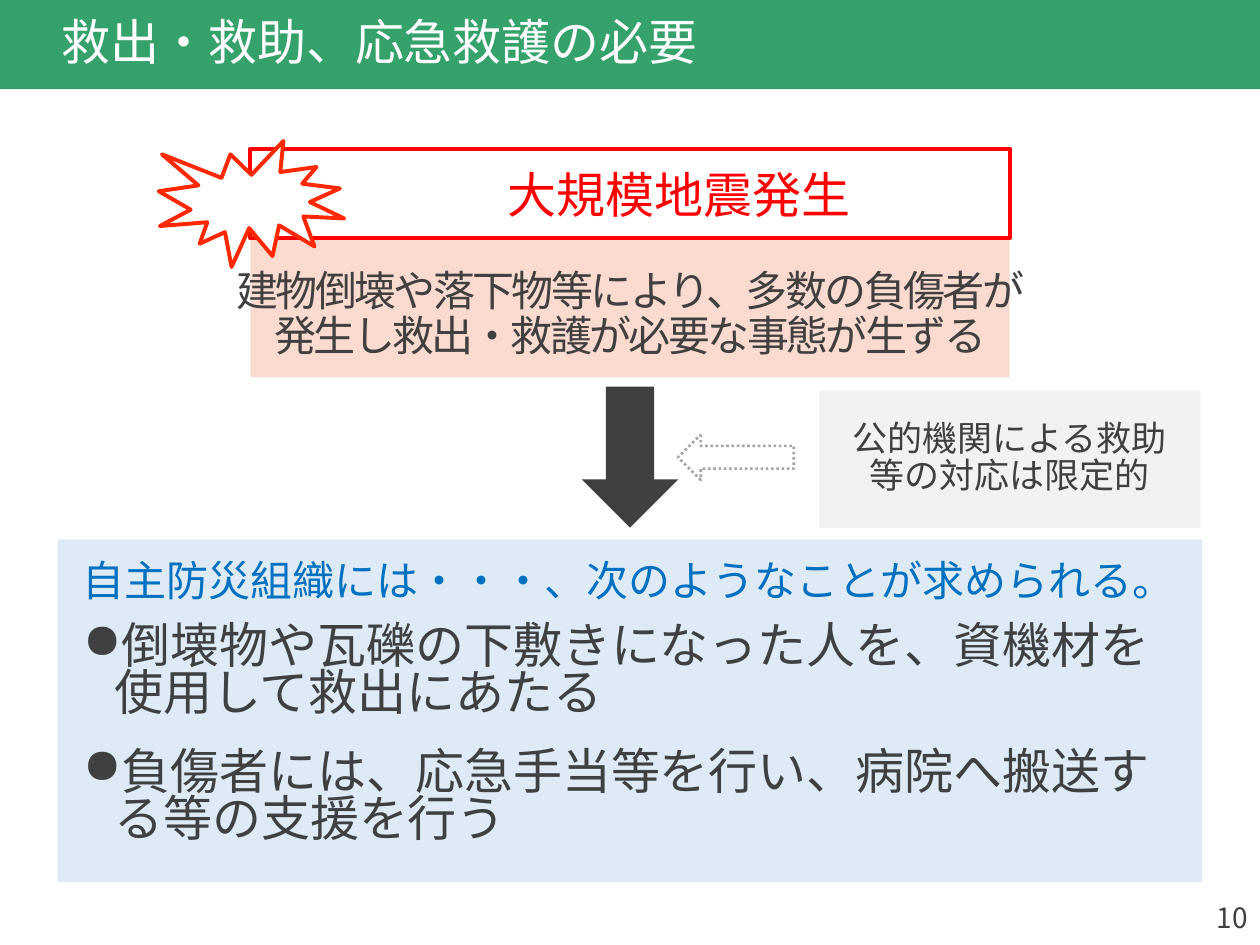
"""Build the slide on rescue and first aid after a major earthquake."""
from lxml.etree import SubElement
from pptx import Presentation
from pptx.dml.color import RGBColor
from pptx.enum.dml import MSO_LINE
from pptx.enum.shapes import MSO_SHAPE
from pptx.enum.text import MSO_ANCHOR, MSO_AUTO_SIZE, PP_ALIGN
from pptx.oxml.ns import qn
from pptx.util import Pt

GREEN = RGBColor(0x35, 0xA1, 0x6B)
WHITE = RGBColor(0xFF, 0xFF, 0xFF)
DARK = RGBColor(0x40, 0x40, 0x40)
RED = RGBColor(0xFF, 0x00, 0x00)
ORANGE = RGBColor(0xFF, 0x28, 0x00)
PINK = RGBColor(0xFB, 0xDA, 0xD0)
PALE_BLUE = RGBColor(0xDE, 0xEB, 0xF7)
BLUE = RGBColor(0x00, 0x70, 0xC0)
GRAY = RGBColor(0xA5, 0xA5, 0xA5)
PALE_GRAY = RGBColor(0xF2, 0xF2, 0xF2)
JP, LATO = "Noto Sans CJK JP", "Lato"

TITLE = "　救出・救助、応急救護の必要"
EVENT = "　　大規模地震発生"
DAMAGE = "建物倒壊や落下物等により、多数の負傷者が\n発生し救出・救護が必要な事態が生ずる"
LIMIT = "公的機関による救助\n等の対応は限定的"
ROLE = "自主防災組織には・・・、次のようなことが求められる。"
TASKS = [
    "倒壊物や瓦礫の下敷きになった人を、資機材を\n使用して救出にあたる",
    "負傷者には、応急手当等を行い、病院へ搬送する等の支援を行う",
]
PAGE = "10"

W, H = 720, 540
EVENT_W, EVENT_H = 434, 51
EVENT_LEFT = (W - EVENT_W) / 2
PANEL_W = 654
NOTE_INSETS = (7.2, 17.3, 7.2, 3.6)


def place(s, left, top, width, height):
    s.left, s.top, s.width, s.height = map(Pt, (left, top, width, height))


def add_shape(kind, box, fill=None, line=None, weight=2.25):
    s = slide.shapes.add_shape(kind, *map(Pt, box))
    s.shadow.inherit = False
    if fill is None:
        s.fill.background()
    else:
        s.fill.solid()
        s.fill.fore_color.rgb = fill
    if line is None:
        s.line.fill.background()
    else:
        s.line.color.rgb = line
        s.line.width = Pt(weight)
    return s


def set_frame(s, insets=(7.2, 3.6, 7.2, 3.6), anchor=MSO_ANCHOR.TOP, wrap=True):
    tf = s.text_frame
    tf.margin_left, tf.margin_top, tf.margin_right, tf.margin_bottom = map(Pt, insets)
    tf.vertical_anchor = anchor
    tf.word_wrap = wrap
    tf.auto_size = MSO_AUTO_SIZE.NONE
    return tf


def write(p, text, size, color, font=JP, align=PP_ALIGN.LEFT, spacing=1.0,
          before=0, after=0, tracking=None, bullet=None):
    p.text = text
    p.alignment = align
    p.line_spacing = spacing
    p.space_before, p.space_after = Pt(before), Pt(after)
    p.font.size = Pt(size)
    p.font.color.rgb = color
    p.font.name = font
    props = p._p.pPr
    default = props.find(qn("a:defRPr"))
    SubElement(default, qn("a:ea")).set("typeface", font)
    if tracking:
        default.set("spc", str(int(tracking * 100)))
    if bullet:
        props.set("marL", str(Pt(18)))
        props.set("indent", str(-Pt(18)))
        mark = SubElement(props, qn("a:buChar"))
        mark.set("char", bullet)
        default.addprevious(mark)


prs = Presentation()
prs.slide_width, prs.slide_height = Pt(W), Pt(H)
slide = prs.slides.add_slide(prs.slide_layouts[5])

title = slide.shapes.title
place(title, 0, 0, W, 51)
title.fill.solid()
title.fill.fore_color.rgb = GREEN
write(set_frame(title, anchor=MSO_ANCHOR.MIDDLE).paragraphs[0], TITLE, 28, WHITE, spacing=0.9)

page = slide.shapes.add_textbox(Pt(558), Pt(511), Pt(162), Pt(29))
write(set_frame(page).paragraphs[0], PAGE, 16, DARK, align=PP_ALIGN.RIGHT)

damage = add_shape(MSO_SHAPE.RECTANGLE, (EVENT_LEFT, 137, EVENT_W, 78.5), PINK)
write(set_frame(damage, NOTE_INSETS, wrap=False).paragraphs[0], DAMAGE, 24, DARK, LATO,
      PP_ALIGN.CENTER, 0.9, before=10, tracking=-1.5)

event = add_shape(MSO_SHAPE.RECTANGLE, (EVENT_LEFT, 85, EVENT_W, EVENT_H), line=RED)
write(set_frame(event, anchor=MSO_ANCHOR.MIDDLE).paragraphs[0], EVENT, 28, RED,
      align=PP_ALIGN.CENTER)

add_shape(MSO_SHAPE.EXPLOSION1, (90.7, 80.6, 106, 72), WHITE, ORANGE)
add_shape(MSO_SHAPE.DOWN_ARROW, ((W - 55) / 2, 221, 55, 80.5), DARK)

panel = add_shape(MSO_SHAPE.RECTANGLE, ((W - PANEL_W) / 2, 308.2, PANEL_W, 196), PALE_BLUE)
tf = set_frame(panel, (14.4,) * 4)
write(tf.paragraphs[0], ROLE, 24, BLUE, spacing=0.8, before=10)
for task in TASKS:
    write(tf.add_paragraph(), task, 28, DARK, spacing=0.8, before=12, after=6, bullet="●")

support = add_shape(MSO_SHAPE.DOWN_ARROW, (407.5, 228.2, 26, 66.2), WHITE, GRAY, 1.5)
support.rotation = 90
support.line.dash_style = MSO_LINE.ROUND_DOT

limit = add_shape(MSO_SHAPE.RECTANGLE, (468, 223.2, 218, 78.5), PALE_GRAY)
write(set_frame(limit, NOTE_INSETS).paragraphs[0], LIMIT, 20, DARK,
      align=PP_ALIGN.CENTER, spacing=0.9, before=10)

prs.save("out.pptx")
